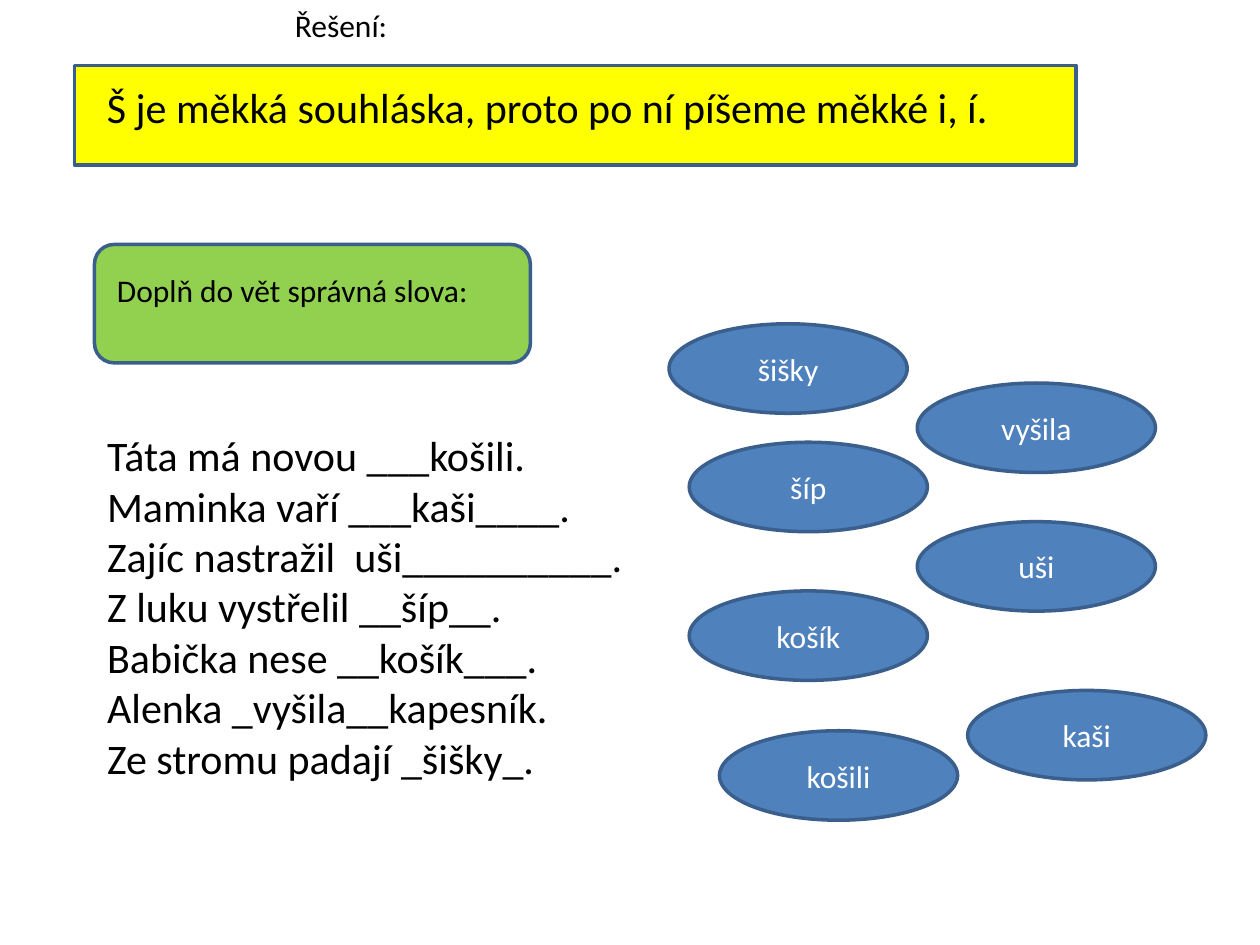
from dataclasses import dataclass

from pptx import Presentation
from pptx.dml.color import RGBColor
from pptx.enum import shapes, text
from pptx.oxml.xmlchemy import OxmlElement
from pptx.util import Inches, Pt


@dataclass(frozen=True)
class Theme:
    font: str = "Calibri"
    small: int = 18
    large: int = 24
    ink: str = "000000"
    light: str = "FFFFFF"
    outline: str = "3A5F8C"
    outline_width: int = 2
    rule_fill: str = "FFFF00"
    task_fill: str = "92D050"
    word_fill: str = "4F81BD"


@dataclass(frozen=True)
class Area:
    left: float
    top: float
    width: float
    height: float

    def lengths(self) -> list:
        return [Inches(v) for v in (self.left, self.top, self.width, self.height)]


@dataclass(frozen=True)
class Word:
    label: str
    left: float
    top: float


THEME = Theme()
WORD_WIDTH, WORD_HEIGHT = 1.89, 0.71
WORDS = [
    Word("šišky", 5.31, 2.57),
    Word("vyšila", 7.28, 3.04),
    Word("šíp", 5.47, 3.51),
    Word("uši", 7.28, 4.14),
    Word("košík", 5.47, 4.69),
    Word("kaši", 7.68, 5.48),
    Word("košili", 5.71, 5.8),
]
SENTENCES = [
    "Táta má novou ___košili.",
    "Maminka vaří ___kaši____.",
    "Zajíc nastražil  uši__________.",
    "Z luku vystřelil __šíp__.",
    "Babička nese __košík___.",
    "Alenka _vyšila__kapesník.",
    "Ze stromu padají _šišky_.",
]


def write(frame, lines: list[str], size: int, color: str = THEME.ink,
          align=text.PP_ALIGN.LEFT, anchor=text.MSO_ANCHOR.TOP) -> None:
    frame.text = "\n".join(lines)
    frame_format = {"word_wrap": True, "auto_size": text.MSO_AUTO_SIZE.NONE,
                    "vertical_anchor": anchor}
    for name, value in frame_format.items():
        setattr(frame, name, value)
    for para in frame.paragraphs:
        para.alignment = align
        para.space_before = Pt(0)
        for span in para.runs:
            for name, value in {"name": THEME.font, "size": Pt(size)}.items():
                setattr(span.font, name, value)
            span.font.color.rgb = RGBColor.from_string(color)


def place(box, area: Area) -> None:
    box.left, box.top, box.width, box.height = area.lengths()


def remove_bullets(frame) -> None:
    for para in frame.paragraphs:
        properties = para._p.get_or_add_pPr()
        properties.set("marL", "0")
        properties.set("indent", "0")
        properties.append(OxmlElement("a:buNone"))


def add_panel(page, kind, area: Area, fill: str):
    panel = page.shapes.add_shape(kind, *area.lengths())
    panel.shadow.inherit = False
    panel.fill.solid()
    panel.fill.fore_color.rgb = RGBColor.from_string(fill)
    panel.line.color.rgb = RGBColor.from_string(THEME.outline)
    panel.line.width = Pt(THEME.outline_width)
    return panel


def add_label(page, label: str, area: Area, size: int) -> None:
    box = page.shapes.add_textbox(*area.lengths())
    write(box.text_frame, [label], size)


def add_word(page, word: Word) -> None:
    area = Area(word.left, word.top, WORD_WIDTH, WORD_HEIGHT)
    oval = add_panel(page, shapes.MSO_SHAPE.OVAL, area, THEME.word_fill)
    write(oval.text_frame, [word.label], THEME.small, THEME.light,
          text.PP_ALIGN.CENTER, text.MSO_ANCHOR.MIDDLE)


def main() -> None:
    deck = Presentation()
    deck.slide_width, deck.slide_height = Inches(10), Inches(7.5)
    page = deck.slides.add_slide(deck.slide_layouts[1])

    title, body = page.placeholders
    place(title, Area(2.24, 0, 1.89, 0.4))
    write(title.text_frame, ["Řešení:"], THEME.small)
    place(body, Area(0.75, 3.36, 4.41, 2.93))
    write(body.text_frame, SENTENCES, THEME.large)
    remove_bullets(body.text_frame)

    add_panel(page, shapes.MSO_SHAPE.ROUNDED_RECTANGLE,
              Area(0.75, 1.94, 3.46, 0.94), THEME.task_fill)
    add_panel(page, shapes.MSO_SHAPE.RECTANGLE,
              Area(0.59, 0.52, 7.95, 0.79), THEME.rule_fill)
    add_label(page, "Š je měkká souhláska, proto po ní píšeme měkké i, í.",
              Area(0.75, 0.6, 7.64, 0.5), THEME.large)
    add_label(page, "Doplň do vět správná slova:",
              Area(0.83, 2.1, 7.8, 0.4), THEME.small)
    for word in WORDS:
        add_word(page, word)

    deck.save("out.pptx")


if __name__ == "__main__":
    main()
